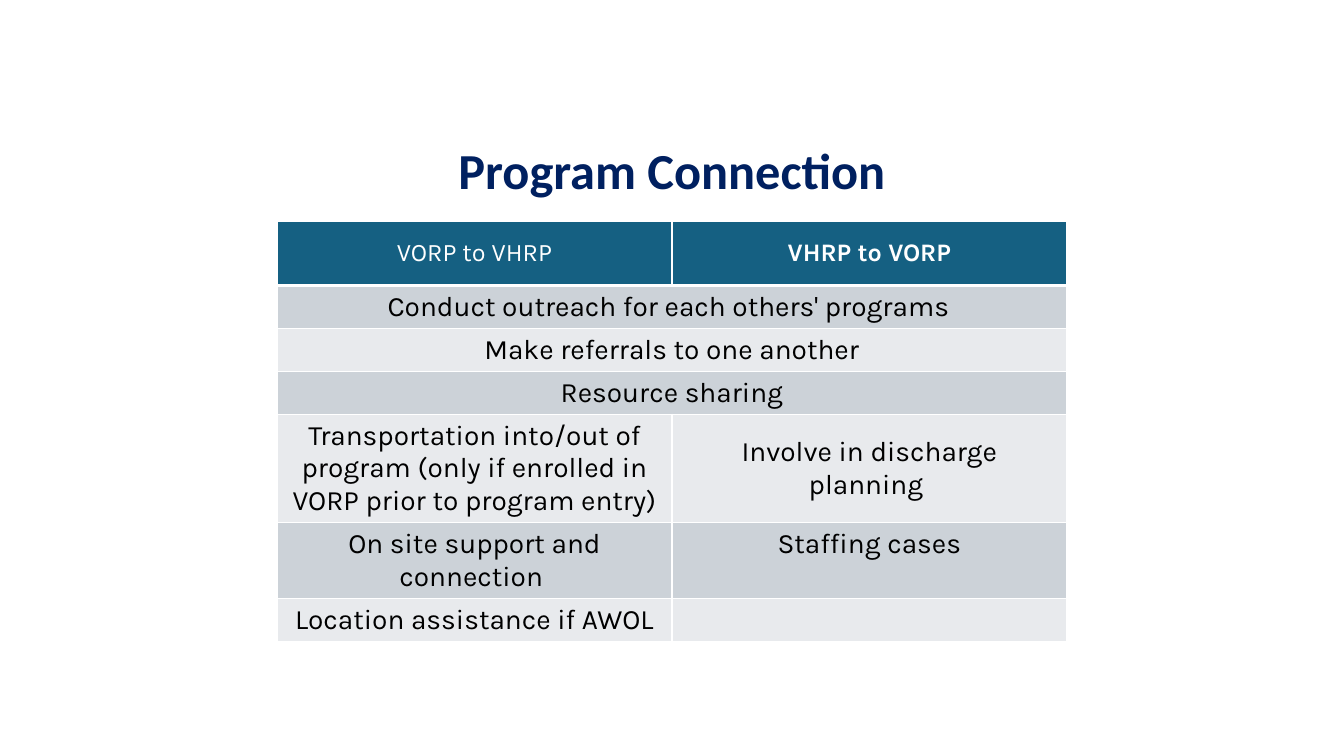
"""Build the Program Connection slide with its two-column table."""
import dataclasses

import lxml.etree
import pptx
import pptx.dml.color
import pptx.enum.text
import pptx.oxml.ns
import pptx.util

Pt = pptx.util.Pt
RGBColor = pptx.dml.color.RGBColor
Anchor = pptx.enum.text.MSO_ANCHOR
CENTER = pptx.enum.text.PP_ALIGN.CENTER

NAVY = RGBColor(0x00, 0x20, 0x60)
TEAL = RGBColor(0x15, 0x60, 0x82)
WHITE = RGBColor(0xFF, 0xFF, 0xFF)
BLACK = RGBColor(0x00, 0x00, 0x00)
BANDS = (RGBColor(0xE8, 0xEA, 0xED), RGBColor(0xCC, 0xD2, 0xD8))

COLUMN_WIDTH = Pt(282)
HEADER_HEIGHT = Pt(46)
ROW_HEIGHT = Pt(29.5)


@dataclasses.dataclass(frozen=True)
class TableRow:
    texts: tuple[str, ...]
    anchor: Anchor = Anchor.TOP


ROWS = (
    TableRow(("VORP to VHRP", "VHRP to VORP"), Anchor.MIDDLE),
    TableRow(("Conduct outreach for each others' programs ",)),
    TableRow(("Make referrals to one another",)),
    TableRow(("Resource sharing",)),
    TableRow(
        (
            "Transportation into/out of program (only if enrolled in VORP prior to program entry)",
            "Involve in discharge planning ",
        ),
        Anchor.MIDDLE,
    ),
    TableRow(("On site support and connection ", "Staffing cases")),
    TableRow(("Location assistance if AWOL", "")),
)


def write_text(frame, text: str, color: RGBColor, **font_format) -> None:
    para = frame.paragraphs[0]
    para.alignment = CENTER
    if not text:
        return
    span = para.add_run()
    span.text = text
    span.font.color.rgb = color
    for name, value in font_format.items():
        setattr(span.font, name, value)


def add_borders(cell, bottom_width: int) -> None:
    properties = cell._tc.get_or_add_tcPr()
    qualify = pptx.oxml.ns.qn
    widths = {"lnL": Pt(1), "lnR": Pt(1), "lnT": Pt(1), "lnB": bottom_width}
    for side, width in widths.items():
        line = lxml.etree.SubElement(properties, qualify(f"a:{side}"), w=str(int(width)))
        fill = lxml.etree.SubElement(line, qualify("a:solidFill"))
        lxml.etree.SubElement(fill, qualify("a:srgbClr"), val=str(WHITE))


def add_title(page) -> None:
    box = page.shapes.title
    place = {"left": Pt(174), "top": Pt(96), "width": Pt(612), "height": Pt(75)}
    for name, value in place.items():
        setattr(box, name, value)
    box.text_frame.vertical_anchor = Anchor.TOP
    write_text(box.text_frame, "Program Connection", NAVY,
               name="Calibri", size=Pt(36), bold=True)


def add_program_table(page) -> None:
    height = HEADER_HEIGHT + ROW_HEIGHT * (len(ROWS) - 1)
    table = page.shapes.add_table(
        len(ROWS), 2, Pt(198), Pt(158), COLUMN_WIDTH * 2, height
    ).table
    table.first_row = False
    table.horz_banding = False
    for column in table.columns:
        column.width = COLUMN_WIDTH
    for index, row in enumerate(ROWS):
        header = index == 0
        table.rows[index].height = HEADER_HEIGHT if header else ROW_HEIGHT
        if len(row.texts) == 1:
            table.cell(index, 0).merge(table.cell(index, 1))
        for position in range(2):
            cell = table.cell(index, position)
            add_borders(cell, Pt(3) if header else Pt(1))
            cell.fill.solid()
            cell.fill.fore_color.rgb = TEAL if header else BANDS[index % 2]
            cell.vertical_anchor = row.anchor
        for position, text in enumerate(row.texts):
            write_text(
                table.cell(index, position).text_frame, text,
                WHITE if header else BLACK, name="Karla",
                size=Pt(18 if header else 20), bold=header and position == 1,
            )


def main() -> None:
    deck = pptx.Presentation()
    deck.slide_width, deck.slide_height = Pt(960), Pt(540)
    page = deck.slides.add_slide(deck.slide_layouts[5])
    add_title(page)
    add_program_table(page)
    deck.save("out.pptx")


if __name__ == "__main__":
    main()
